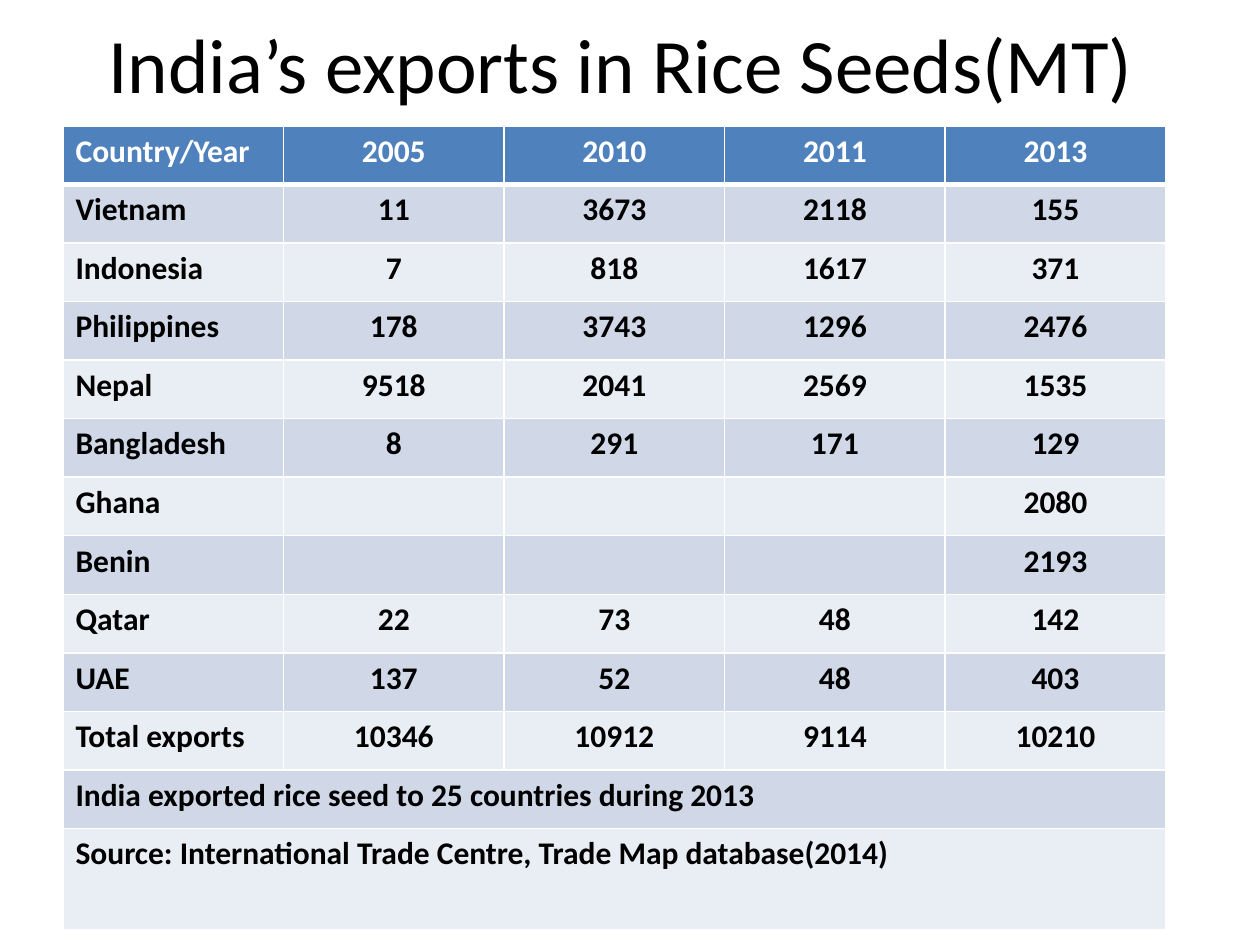
from dataclasses import dataclass
from pptx import Presentation
from pptx.dml.color import RGBColor as Color
from pptx.enum.text import MSO_ANCHOR as Anchor, PP_ALIGN as Align
from pptx.oxml.ns import qn
from pptx.util import Cm, Pt
from lxml.etree import SubElement as Sub


@dataclass
class Theme:
    font: str = "Calibri"
    ink: str = "000000"
    white: str = "FFFFFF"
    head: str = "4F81BD"
    bands: tuple = ("E9EDF4", "D0D8E8")
    big: int = 44
    body: int = 18
    thin: int = 1
    thick: int = 3


class Deck:
    def __init__(self, theme):
        self.theme = theme
        self.deck = Presentation()
        self.deck.slide_width, self.deck.slide_height = Cm(25.4), Cm(19.05)
        self.slide = self.deck.slides.add_slide(self.deck.slide_layouts[5])

    def style(self, frame, size, color, align, bold=False):
        for para in frame.paragraphs:
            para.alignment = align
            for run in para.runs:
                font = run.font
                font.name, font.size, font.bold = self.theme.font, Pt(size), bold
                font.color.rgb = Color.from_string(color)

    def title(self, text, left, top, width, height):
        box = self.slide.shapes.title
        box.left, box.top, box.width, box.height = left, top, width, height
        frame = box.text_frame
        frame.text = text
        frame.vertical_anchor = Anchor.MIDDLE
        self.style(frame, self.theme.big, self.theme.ink, Align.CENTER)

    def edge(self, cell, side, width):
        props = cell._tc.get_or_add_tcPr()
        line = Sub(props, qn(f"a:ln{side}"), w=str(Pt(width)))
        fill = Sub(line, qn("a:solidFill"))
        Sub(fill, qn("a:srgbClr"), val=self.theme.white)

    def cell(self, cell, text, row, col):
        look = self.theme
        top = look.thick if row == 1 else look.thin
        base = look.thick if row == 0 else look.thin
        for side, width in zip("LRTB", (look.thin, look.thin, top, base)):
            self.edge(cell, side, width)
        cell.fill.solid()
        back = look.bands[row % 2] if row else look.head
        cell.fill.fore_color.rgb = Color.from_string(back)
        cell.text_frame.text = text
        self.style(cell.text_frame, look.body, look.ink if row else look.white,
                   Align.CENTER if col else Align.LEFT, True)

    def table(self, data, left, top, width, heights):
        count = len(data[0])
        grid = self.slide.shapes.add_table(
            len(data), count, left, top, width, sum(heights)).table
        for row, (items, height) in enumerate(zip(data, heights)):
            grid.rows[row].height = height
            if len(items) == 1:
                grid.cell(row, 0).merge(grid.cell(row, count - 1))
            for col in range(count):
                text = items[col] if col < len(items) else ""
                self.cell(grid.cell(row, col), text, row, col)

    def save(self):
        self.deck.save("out.pptx")


ROWS = [
    ("Country/Year", "2005", "2010", "2011", "2013"),
    ("Vietnam", "11", "3673", "2118", "155"),
    ("Indonesia", "7", "818", "1617", "371"),
    ("Philippines", "178", "3743", "1296", "2476"),
    ("Nepal", "9518", "2041", "2569", "1535"),
    ("Bangladesh", "8", "291", "171", "129"),
    ("Ghana", "", "", "", "2080"),
    ("Benin", "", "", "", "2193"),
    ("Qatar", "22", "73", "48", "142"),
    ("UAE", "137", "52", "48", "403"),
    ("Total exports", "10346", "10912", "9114", "10210"),
    ("India exported rice seed to 25 countries during 2013",),
    ("Source: International Trade Centre, Trade Map database(2014)",),
]


def main():
    deck = Deck(Theme())
    deck.title("India’s exports in Rice Seeds(MT) ",
               Cm(1.27), Cm(0), Cm(22.86), Cm(2.54))
    heights = [Cm(1.18)] * (len(ROWS) - 1) + [Cm(2.04)]
    deck.table(ROWS, Cm(1.27), Cm(2.54), Cm(22.23), heights)
    deck.save()


if __name__ == "__main__":
    main()
